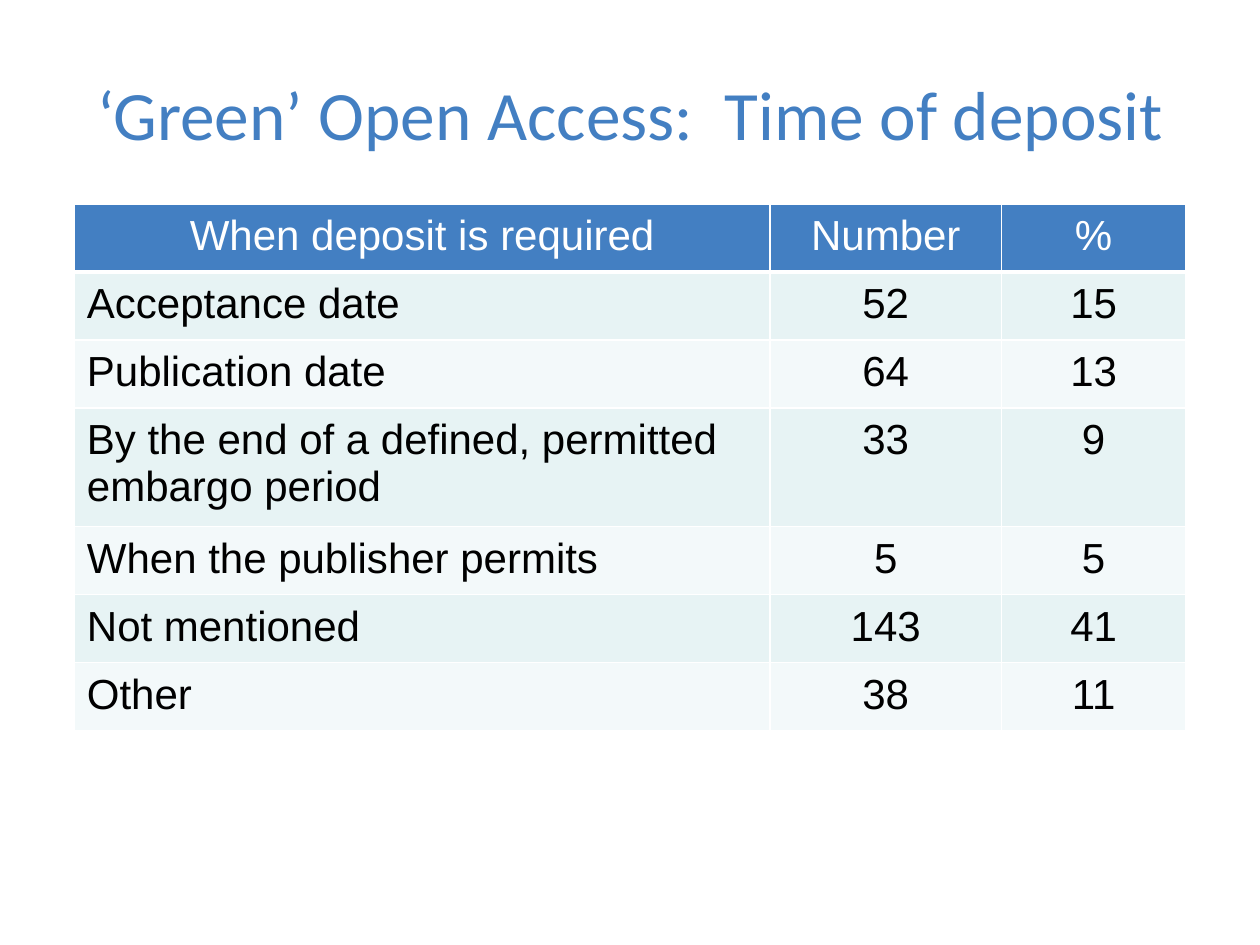
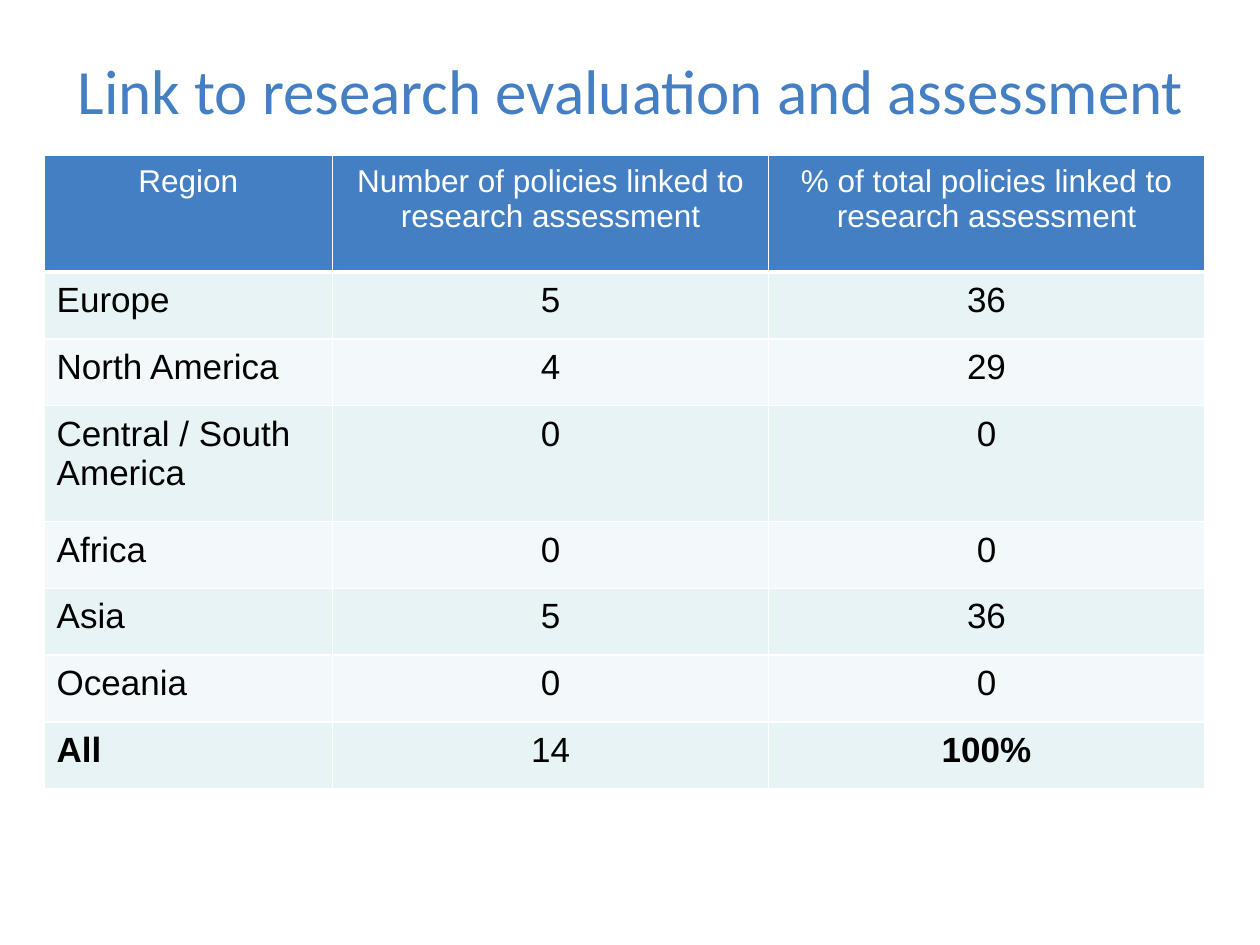
from lxml import etree
from pptx import Presentation
from pptx.dml.color import RGBColor
from pptx.enum.text import MSO_ANCHOR, PP_ALIGN
from pptx.oxml.ns import qn
from pptx.util import Inches, Pt

BLUE = RGBColor(0x43, 0x7F, 0xC2)
MINT = RGBColor(0xE7, 0xF3, 0xF4)
PALE = RGBColor(0xF3, 0xF9, 0xFA)
WHITE = RGBColor(0xFF, 0xFF, 0xFF)
BLACK = RGBColor(0, 0, 0)
LEFT, CENTER = PP_ALIGN.LEFT, PP_ALIGN.CENTER
MIDDLE = MSO_ANCHOR.MIDDLE

DEPOSIT = [
    ("When deposit is required", "Number", "%"),
    ("Acceptance date", "52", "15"),
    ("Publication date", "64", "13"),
    ("By the end of a defined, permitted embargo period", "33", "9"),
    ("When the publisher permits", "5", "5"),
    ("Not mentioned", "143", "41"),
    ("Other", "38", "11"),
]
REGIONS = [
    ("Region", "Number of policies linked to research assessment",
     "% of total policies linked to research assessment"),
    ("Europe", "5", "36"),
    ("North America", "4", "29"),
    ("Central / South America", "0", "0"),
    ("Africa", "0", "0"),
    ("Asia", "5", "36"),
    ("Oceania", "0", "0"),
    ("All", "14", "100%"),
]


def style(frame, size, color, align, font, bold=False):
    para = frame.paragraphs[0]
    para.alignment = align
    for run in para.runs:
        run.font.size = Pt(size)
        run.font.name = font
        run.font.bold = bold
        run.font.color.rgb = color


def add_title(slide, text, top, size):
    box = slide.shapes.add_textbox(Inches(0.26), Inches(top), Inches(9.49), Inches(0.89))
    frame = box.text_frame
    frame.word_wrap = True
    frame.vertical_anchor = MIDDLE
    frame.text = text
    style(frame, size, BLUE, CENTER, "Calibri")


def add_edges(cell, sides):
    """Draw white cell borders; sides maps L, R, T, B, in that order, to points."""
    props = cell._tc.get_or_add_tcPr()
    for side, width in sides.items():
        line = etree.SubElement(props, qn("a:ln" + side), w=str(Pt(width)))
        fill = etree.SubElement(line, qn("a:solidFill"))
        etree.SubElement(fill, qn("a:srgbClr"), val=str(WHITE))


def fill_cell(cell, text, row, col, size, bold):
    head = row == 0
    edges = {"L": 1, "R": 1, "T": 1, "B": 3} if head else {"L": 1, "R": 1, "B": 1}
    add_edges(cell, edges)
    cell.fill.solid()
    cell.fill.fore_color.rgb = BLUE if head else MINT if row % 2 else PALE
    cell.margin_left = cell.margin_right = Inches(0.1)
    cell.margin_top = cell.margin_bottom = Inches(0.07)
    cell.text = text
    align = CENTER if head or col else LEFT
    style(cell.text_frame, size, WHITE if head else BLACK, align, "Arial", bold)


def add_grid(slide, data, place, widths, height, tall, sizes, bold=()):
    """Add a table; tall maps row numbers to their own height, sizes is (head, body)."""
    heights = [tall.get(row, height) for row in range(len(data))]
    left, top = place
    table = slide.shapes.add_table(
        len(data), len(widths), Inches(left), Inches(top),
        Inches(sum(widths)), Inches(sum(heights))).table
    for col, width in enumerate(widths):
        table.columns[col].width = Inches(width)
    for row, texts in enumerate(data):
        table.rows[row].height = Inches(heights[row])
        for col, text in enumerate(texts):
            fill_cell(table.cell(row, col), text, row, col, sizes[row > 0], text in bold)


def main():
    deck = Presentation()
    deck.slide_width, deck.slide_height = Inches(10), Inches(7.5)
    blank = deck.slide_layouts[6]

    slide = deck.slides.add_slide(blank)
    add_title(slide, "‘Green’ Open Access:  Time of deposit", 0.45, 39.6)
    add_grid(slide, DEPOSIT, (0.59, 1.62), (5.52, 1.84, 1.46), 0.54, {3: 0.93}, (24, 24))

    slide = deck.slides.add_slide(blank)
    add_title(slide, "Link to research evaluation and assessment", 0.26, 36)
    add_grid(slide, REGIONS, (0.35, 1.23), (2.29, 3.46, 3.46), 0.53,
             {0: 0.93, 3: 0.92}, (18, 20), bold=("All", "100%"))

    deck.save("out.pptx")


if __name__ == "__main__":
    main()
